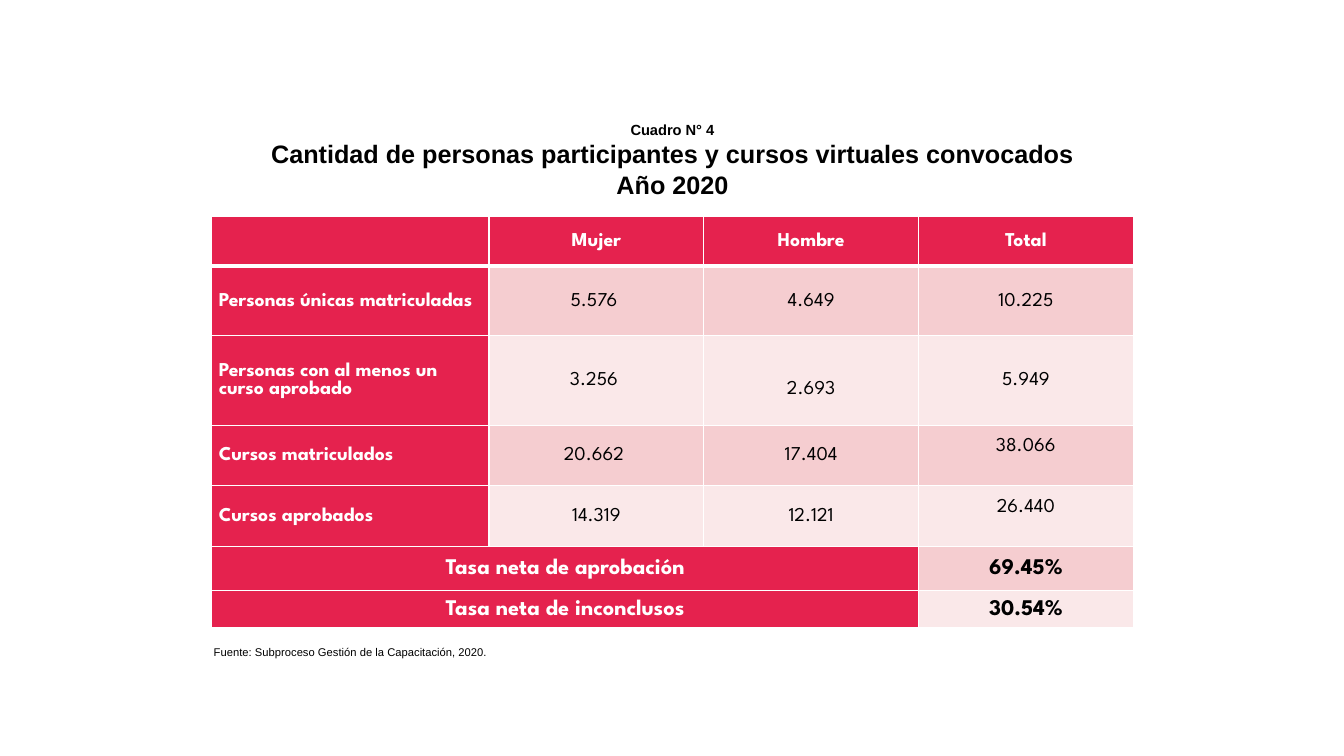
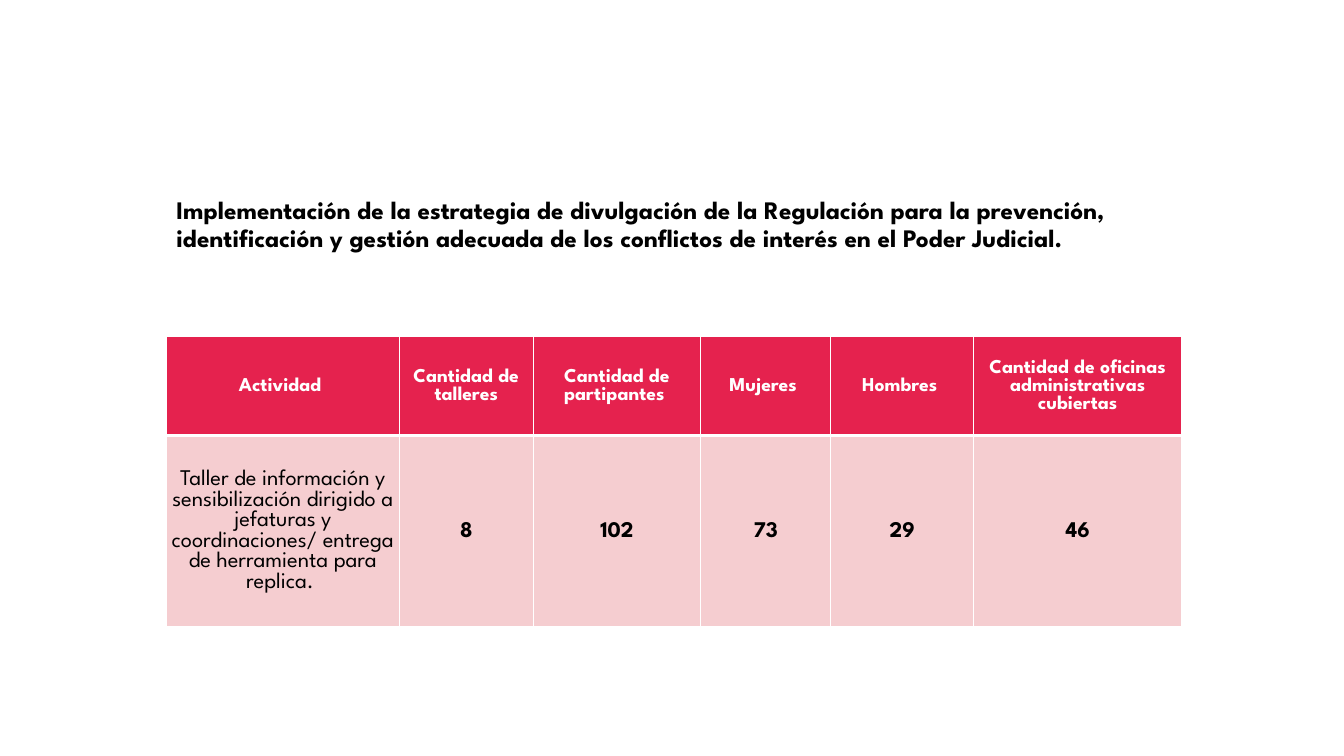
from dataclasses import dataclass

from lxml import etree
from pptx import Presentation
from pptx.dml.color import RGBColor
from pptx.enum import text as t
from pptx.oxml import ns
from pptx.util import Inches, Pt


@dataclass(frozen=True)
class Theme:
    crimson: str = "E5224E"
    rose: str = "F5CDD0"
    blush: str = "FAE8E9"
    white: str = "FFFFFF"
    black: str = "000000"
    plain_font: str = "Arial"
    table_font: str = "League Spartan"
    title_size: float = 18
    kicker_size: float = 10.5
    large_size: float = 16
    table_size: float = 14
    source_size: float = 8
    rule: float = 1
    header_rule: float = 3


THEME = Theme()


@dataclass(frozen=True)
class Box:
    left: float
    top: float
    width: float
    height: float

    def lengths(self):
        return [Inches(v) for v in (self.left, self.top, self.width, self.height)]


@dataclass(frozen=True)
class Entry:
    """One table cell; drop moves its text down, or up when negative."""
    text: str
    fill: str = THEME.crimson
    color: str = THEME.white
    size: float = THEME.table_size
    bold: bool = True
    align: t.PP_ALIGN = t.PP_ALIGN.CENTER
    span: int = 1
    drop: float = 0


def header(words: str) -> Entry:
    return Entry(words)


def row_label(words: str) -> Entry:
    return Entry(words, align=t.PP_ALIGN.LEFT)


def figure(words: str, fill: str, drop: float = 0) -> Entry:
    return Entry(words, fill, THEME.black, bold=False, drop=drop)


def rate_label(words: str) -> Entry:
    return Entry(words, size=THEME.large_size, span=3)


def highlight(words: str, fill: str, bold: bool = True) -> Entry:
    return Entry(words, fill, THEME.black, THEME.large_size, bold)


def style_paragraph(paragraph, font: str, size: float, color: str, bold: bool,
                    align: t.PP_ALIGN) -> None:
    paragraph.alignment = align
    for run in paragraph.runs:
        run.font.name = font
        run.font.size = Pt(size)
        run.font.bold = bold
        run.font.color.rgb = RGBColor.from_string(color)


def add_title(slide, box: Box, words: str, font: str, align: t.PP_ALIGN):
    title = slide.shapes.title
    title.left, title.top, title.width, title.height = box.lengths()
    frame = title.text_frame
    frame.text = words
    frame.word_wrap = True
    frame.auto_size = t.MSO_AUTO_SIZE.NONE
    frame.vertical_anchor = t.MSO_ANCHOR.TOP
    for paragraph in frame.paragraphs:
        style_paragraph(paragraph, font, THEME.title_size, THEME.black, True, align)
    return frame


def set_borders(cell, top: float, bottom: float) -> None:
    properties = cell._tc.get_or_add_tcPr()
    widths = {"L": THEME.rule, "R": THEME.rule, "T": top, "B": bottom}
    for side, width in widths.items():
        line = etree.SubElement(properties, ns.qn(f"a:ln{side}"), w=str(Pt(width)))
        fill = etree.SubElement(line, ns.qn("a:solidFill"))
        etree.SubElement(fill, ns.qn("a:srgbClr"), val=THEME.white)


def fill_cell(cell, entry: Entry) -> None:
    side = 0.07 if entry.align == t.PP_ALIGN.LEFT else 0.01
    cell.margin_left = cell.margin_right = Inches(side)
    cell.margin_top = Inches(0.01 + max(entry.drop, 0))
    cell.margin_bottom = Inches(max(-entry.drop, 0))
    cell.vertical_anchor = t.MSO_ANCHOR.MIDDLE
    cell.text_frame.text = entry.text
    style_paragraph(cell.text_frame.paragraphs[0], THEME.table_font, entry.size,
                    entry.color, entry.bold, entry.align)
    cell.fill.solid()
    cell.fill.fore_color.rgb = RGBColor.from_string(entry.fill)


def add_data_table(slide, left: float, top: float, widths: list[float],
                   heights: list[float], rows: list[list[Entry]]) -> None:
    box = Box(left, top, sum(widths), sum(heights))
    table = slide.shapes.add_table(len(heights), len(widths), *box.lengths()).table
    table.horz_banding = False
    for column, width in zip(table.columns, widths):
        column.width = Inches(width)
    for row, height in zip(table.rows, heights):
        row.height = Inches(height)
    for r, entries in enumerate(rows):
        for c in range(len(widths)):
            set_borders(table.cell(r, c),
                        top=THEME.header_rule if r == 1 else THEME.rule,
                        bottom=THEME.header_rule if r == 0 else THEME.rule)
        c = 0
        for entry in entries:
            cell = table.cell(r, c)
            if entry.span > 1:
                cell.merge(table.cell(r, c + entry.span - 1))
            fill_cell(cell, entry)
            c += entry.span


def add_source(slide, words: str) -> None:
    box = slide.shapes.add_textbox(*Box(0.55, 6.35, 6.67, 0.24).lengths())
    frame = box.text_frame
    frame.word_wrap = True
    frame.margin_left = Inches(1.57)
    frame.text = words
    style_paragraph(frame.paragraphs[0], THEME.plain_font, THEME.source_size,
                    THEME.black, False, t.PP_ALIGN.LEFT)


def build_courses(slide) -> None:
    title = add_title(
        slide, Box(2.53, 1.15, 8.28, 0.95),
        "Cuadro N° 4\n"
        "Cantidad de personas participantes y cursos virtuales convocados\n"
        "Año 2020",
        THEME.plain_font, t.PP_ALIGN.CENTER)
    title.paragraphs[0].runs[0].font.size = Pt(THEME.kicker_size)

    rose, blush = THEME.rose, THEME.blush
    rows = [
        [header(words) for words in ("", "Mujer", "Hombre", "Total")],
        [row_label("Personas únicas matriculadas"), figure("5.576 ", rose),
         figure("4.649", rose), figure("10.225", rose)],
        [row_label("Personas con al menos un curso aprobado"), figure("3.256 ", blush),
         figure("2.693", blush, drop=0.18), figure("5.949", blush)],
        [row_label("Cursos matriculados"), figure("20.662 ", rose),
         figure("17.404", rose), figure("38.066", rose, drop=-0.18)],
        [row_label("Cursos aprobados"), figure(" 14.319 ", blush),
         figure("12.121", blush), figure("26.440", blush, drop=-0.18)],
        [rate_label("Tasa neta de aprobación"), highlight("69.45%", rose)],
        [rate_label("Tasa neta de inconclusos"), highlight("30.54%", blush)],
    ]
    add_data_table(slide, 2.1, 2.15, [2.75] + [2.13] * 3,
                   [0.49, 0.69, 0.89, 0.6, 0.6, 0.44, 0.37], rows)
    add_source(slide, "Fuente: Subproceso Gestión de la Capacitación, 2020.")


def build_workshops(slide) -> None:
    title = add_title(
        slide, Box(1.65, 1.91, 10.07, 0.99),
        "Implementación de la estrategia de divulgación de la Regulación para la "
        "prevención, identificación y gestión adecuada de los conflictos de interés "
        "en el Poder Judicial.",
        THEME.table_font, t.PP_ALIGN.LEFT)
    title.paragraphs[0].line_spacing = Pt(19.5)

    headings = ["Actividad ", "Cantidad de talleres", "Cantidad de partipantes ",
                "Mujeres ", "Hombres ", "Cantidad de oficinas administrativas cubiertas"]
    activity = ("Taller de información y sensibilización dirigido a jefaturas y "
                "coordinaciones/ entrega de herramienta para replica. ")
    rows = [
        [header(words) for words in headings],
        [highlight(activity, THEME.rose, bold=False)]
        + [highlight(count, THEME.rose) for count in ("8", "102", "73", "29", "46")],
    ]
    add_data_table(slide, 1.65, 3.34, [2.31, 1.33, 1.66, 1.29, 1.42, 2.06],
                   [0.98, 1.9], rows)


def main() -> None:
    deck = Presentation()
    deck.slide_width, deck.slide_height = Inches(13.33), Inches(7.5)
    title_only = deck.slide_layouts[5]
    for build in (build_courses, build_workshops):
        build(deck.slides.add_slide(title_only))
    deck.save("out.pptx")


if __name__ == "__main__":
    main()
